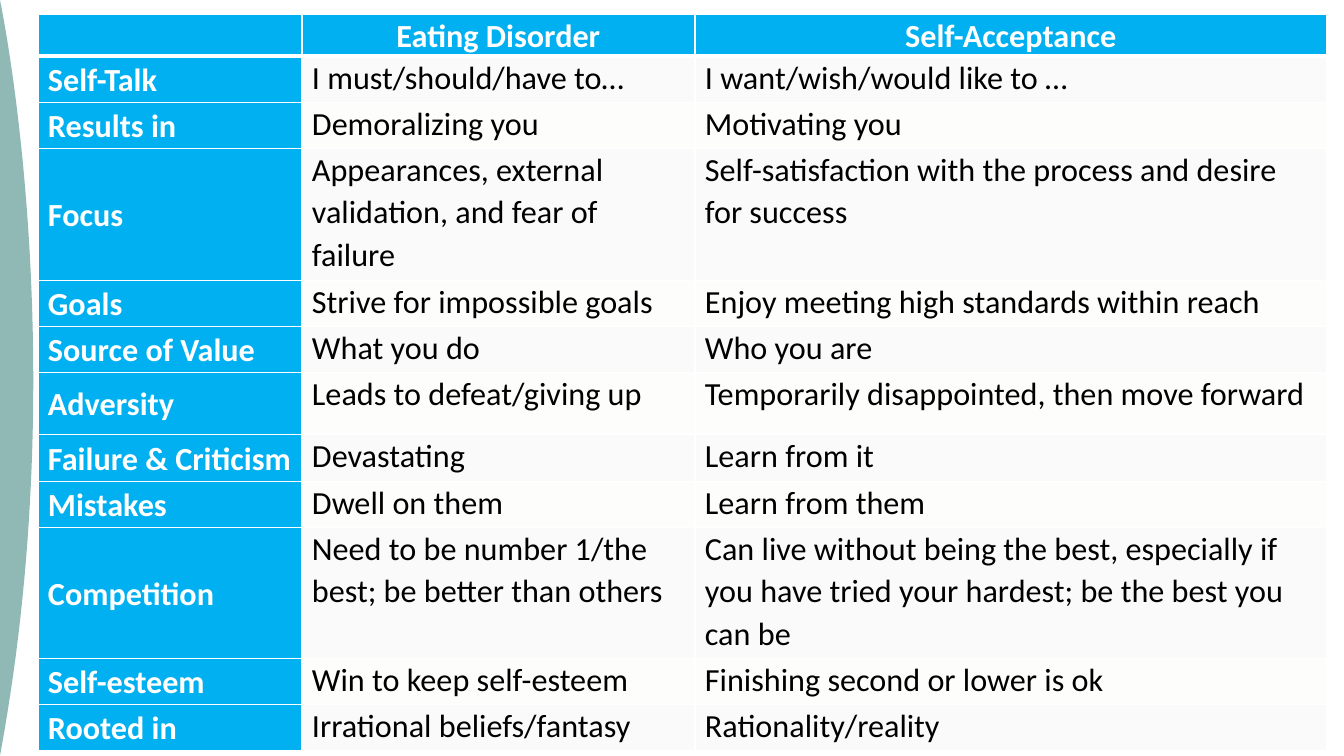
from lxml import etree
from pptx import Presentation
from pptx.dml.color import RGBColor
from pptx.enum.text import MSO_ANCHOR, PP_ALIGN
from pptx.oxml.ns import qn
from pptx.util import Pt

LEFT, CENTER = PP_ALIGN.LEFT, PP_ALIGN.CENTER
TOP, MIDDLE = MSO_ANCHOR.TOP, MSO_ANCHOR.MIDDLE
SCALE = 914400 / 100.8
COLORS = {
    "white": "FFFFFF",
    "black": "000000",
    "blue": "00B0F0",
    "sage": "90B9B5",
    "odd": "FBFAFA",
    "even": "FDFDFC",
}
COLS = [264, 393, 632]
HEIGHTS = [42, 46, 46, 132, 46, 46, 62, 47, 46, 131, 46, 46]
ROWS = [
    ("", "Eating Disorder", "Self-Acceptance"),
    ("Self-Talk", "I must/should/have to…", "I want/wish/would like to …"),
    ("Results in", "Demoralizing you", "Motivating you"),
    ("Focus", "Appearances, external validation, and fear of failure",
     "Self-satisfaction with the process and desire for success"),
    ("Goals", "Strive for impossible goals", "Enjoy meeting high standards within reach"),
    ("Source of Value", "What you do", "Who you are"),
    ("Adversity", "Leads to defeat/giving up", "Temporarily disappointed, then move forward"),
    ("Failure & Criticism", "Devastating", "Learn from it"),
    ("Mistakes", "Dwell on them", "Learn from them"),
    ("Competition", "Need to be number 1/the best; be better than others",
     "Can live without being the best, especially if you have tried your hardest; "
     "be the best you can be"),
    ("Self-esteem", "Win to keep self-esteem", "Finishing second or lower is ok"),
    ("Rooted in", "Irrational beliefs/fantasy", "Rationality/reality"),
]


def px(n):
    return round(n * SCALE)


def color(name):
    return RGBColor.from_string(COLORS[name])


def write(frame, text, size=23, font="Calibri", ink="black", bold=False, align=LEFT):
    para = frame.paragraphs[0]
    para.alignment = align
    para.line_spacing = 1.07
    para.font.size = Pt(size)
    if text:
        run = para.add_run()
        run.text = text
        run.font.name = font
        run.font.size = Pt(size)
        run.font.bold = bold
        run.font.color.rgb = color(ink)


class Board:
    def __init__(self, slide):
        self.slide = slide

    def arc(self, width, height, bend, fill, steps=60):
        points = []
        for i in range(1, steps + 1):
            t = i / steps
            x = 3 * t * (1 - t) ** 2 * width
            y = (1 - t) ** 3 * height + 3 * t * (1 - t) ** 2 * bend
            points.append((px(x), px(y)))
        pen = self.slide.shapes.build_freeform(0, px(height))
        pen.add_line_segments(points, close=True)
        shape = pen.convert_to_shape()
        shape.shadow.inherit = False
        shape.fill.solid()
        shape.fill.fore_color.rgb = color(fill)
        shape.line.fill.background()

    def border(self, cell, top, bottom):
        props = cell._tc.get_or_add_tcPr()
        for i, (side, width) in enumerate(zip("LRTB", (1, 1, top, bottom))):
            line = etree.Element(qn(f"a:ln{side}"), w=str(Pt(width)))
            fill = etree.SubElement(line, qn("a:solidFill"))
            etree.SubElement(fill, qn("a:srgbClr"), val=COLORS["white"])
            props.insert(i, line)

    def cell(self, cell, text, row, col):
        head, label = row == 0, col == 0
        title = head or label
        cell.margin_left = cell.margin_right = px(10)
        cell.margin_top = cell.margin_bottom = 0
        cell.vertical_anchor = MIDDLE if label else TOP
        cell.fill.solid()
        cell.fill.fore_color.rgb = color("blue" if title else "odd" if row % 2 else "even")
        write(cell.text_frame, text, ink="white" if title else "black", bold=title,
              align=CENTER if head else LEFT)
        self.border(cell, top=3 if row == 1 else 1, bottom=3 if head else 1)

    def table(self, left, top, rows, cols, heights):
        table = self.slide.shapes.add_table(
            len(rows), len(cols), px(left), px(top), px(sum(cols)), px(sum(heights))).table
        for col, width in zip(table.columns, cols):
            col.width = px(width)
        for r, (texts, height) in enumerate(zip(rows, heights)):
            table.rows[r].height = px(height)
            for c, text in enumerate(texts):
                self.cell(table.cell(r, c), text, r, c)


def main():
    deck = Presentation()
    deck.slide_width, deck.slide_height = px(1344), px(756)
    board = Board(deck.slides.add_slide(deck.slide_layouts[6]))
    board.arc(75, 756, 352, "sage")
    board.table(38, 14, ROWS, COLS, HEIGHTS)
    deck.save("out.pptx")


if __name__ == "__main__":
    main()
